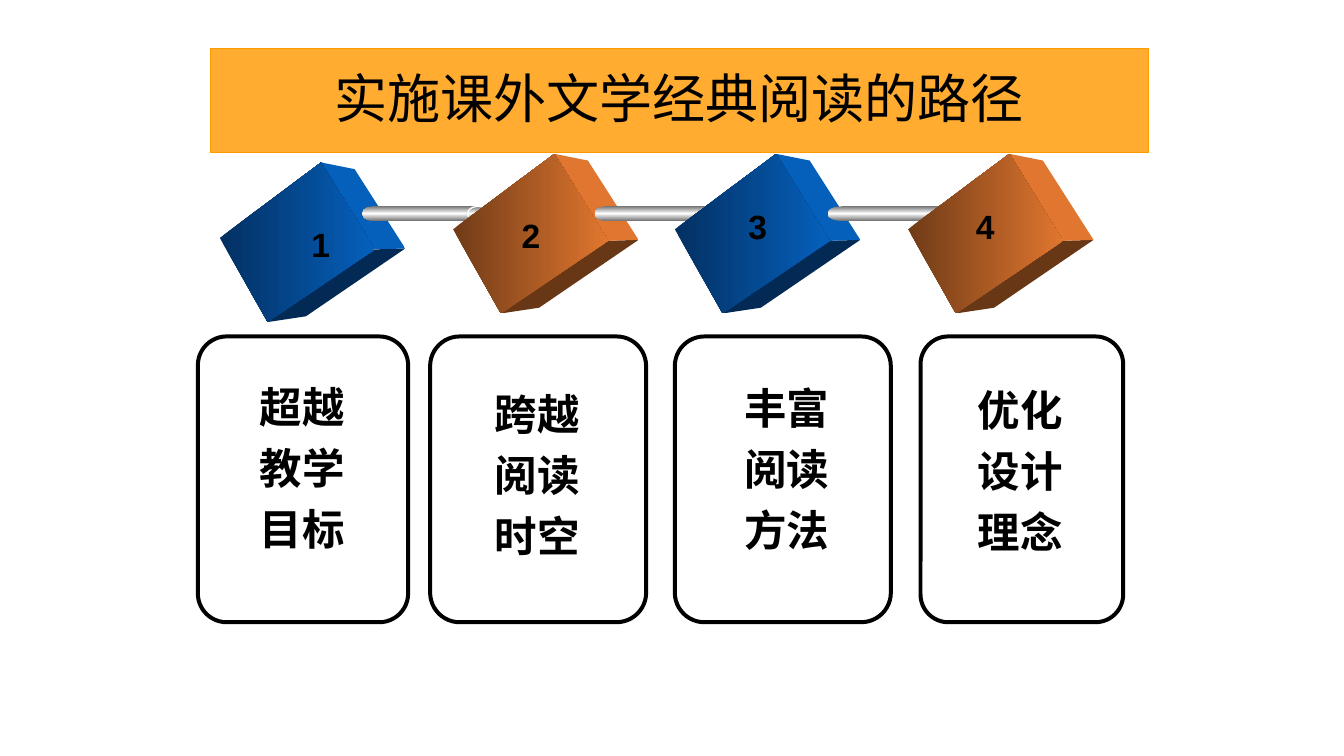
from lxml import etree
from pptx import Presentation
from pptx.dml.color import RGBColor
from pptx.enum.shapes import MSO_SHAPE
from pptx.enum.text import MSO_ANCHOR, PP_ALIGN
from pptx.oxml.ns import qn
from pptx.util import Inches, Pt

BLACK = RGBColor(0x00, 0x00, 0x00)
WHITE = RGBColor(0xFF, 0xFF, 0xFF)
ORANGE = RGBColor(0xFF, 0x99, 0x00)
STEEL = RGBColor(0x76, 0x76, 0x76)
BLUE_FACES = (RGBColor(0x03, 0x30, 0x62), RGBColor(0x05, 0x60, 0xBC), RGBColor(0x02, 0x2A, 0x55))
COPPER_FACES = (RGBColor(0x70, 0x3B, 0x17), RGBColor(0xE0, 0x76, 0x2F), RGBColor(0x68, 0x37, 0x16))

CUBE_LEFT, CUBE_TOP, CUBE_RIGHT, CUBE_BOTTOM = (0, 0.79), (1.06, 0), (1.62, 0.91), (0.5, 1.67)
BACK_TOP, BACK_RIGHT, BACK_BOTTOM = (1.41, 0.07), (1.94, 0.9), (0.9, 1.61)
FRONT_FACE = (CUBE_LEFT, CUBE_TOP, CUBE_RIGHT, CUBE_BOTTOM)
SIDE_FACE = (CUBE_TOP, BACK_TOP, BACK_RIGHT, CUBE_RIGHT)
LOWER_FACE = (CUBE_BOTTOM, CUBE_RIGHT, BACK_RIGHT, BACK_BOTTOM)

ROD_TOP, ROD_HEIGHT = 2.16, 0.15
RODS = [(3.79, 0.22, 1.32), (6.22, 0.22, 1.32), (8.66, 0.29, 1.72)]
CUBES = [
    (2.3, 1.7, BLUE_FACES, (3.16, 2.29)),
    (4.74, 1.61, COPPER_FACES, (5.36, 2.2)),
    (7.06, 1.61, BLUE_FACES, (7.73, 2.11)),
    (9.5, 1.61, COPPER_FACES, (10.11, 2.11)),
]
CARD_TOP, CARD_HEIGHT = 3.52, 2.99
CARDS = [
    (2.07, 2.2, (2.62, 3.94), ("超越", "教学", "目标")),
    (4.5, 2.26, (5.08, 4.01), ("跨越", "阅读", "时空")),
    (7.06, 2.26, (7.69, 3.95), ("丰富", "阅读", "方法")),
    (9.63, 2.12, (10.13, 3.97), ("优化", "设计", "理念")),
]


def add_span(para, text, size, font, bold=False):
    span = para.add_run()
    span.text = text
    span.font.size = Pt(size)
    span.font.name = font
    span.font.bold = bold
    span.font.color.rgb = BLACK


def fill_gradient(shape, colors, angle):
    shape.fill.gradient()
    shape.fill.gradient_angle = angle
    stops = shape.element.spPr.find(qn("a:gradFill")).find(qn("a:gsLst"))
    for stop in list(stops):
        stops.remove(stop)
    for index, color in enumerate(colors):
        position = round(100000 * index / (len(colors) - 1))
        stop = etree.SubElement(stops, qn("a:gs"), pos=str(position))
        etree.SubElement(stop, qn("a:srgbClr"), val=str(color))


def add_title(slide, left, top, width, height):
    title = slide.shapes.title
    title.left, title.top = Inches(left), Inches(top)
    title.width, title.height = Inches(width), Inches(height)
    title.fill.solid()
    title.fill.fore_color.rgb = ORANGE
    color = title.element.spPr.find(qn("a:solidFill"))[0]
    etree.SubElement(color, qn("a:alpha"), val="81000")
    title.line.color.rgb = ORANGE
    title.line.width = Pt(0.75)
    title.text_frame.vertical_anchor = MSO_ANCHOR.MIDDLE
    para = title.text_frame.paragraphs[0]
    para.alignment = PP_ALIGN.CENTER
    para.line_spacing = 0.9
    add_span(para, "实施课外文学经典阅读的路径", 40, "Calibri")


def add_rod(slide, left, top, cap_width, length):
    half = cap_width / 2
    pieces = [
        (MSO_SHAPE.OVAL, left, cap_width),
        (MSO_SHAPE.RECTANGLE, left + half, length - cap_width),
        (MSO_SHAPE.OVAL, left + length - cap_width, cap_width),
    ]
    for kind, piece_left, width in pieces:
        piece = slide.shapes.add_shape(
            kind, Inches(piece_left), Inches(top), Inches(width), Inches(ROD_HEIGHT))
        piece.shadow.inherit = False
        fill_gradient(piece, (STEEL, WHITE, STEEL), 270)
        piece.line.fill.background()
    piece.line.color.rgb = WHITE
    piece.line.width = Pt(1)


def add_cube(slide, left, top, colors):
    dark, bright, lower = colors
    faces = [
        (LOWER_FACE, (lower, lower)),
        (SIDE_FACE, (bright, bright)),
        (FRONT_FACE, (dark, bright)),
    ]
    for corners, shades in faces:
        points = [(Inches(left + x), Inches(top + y)) for x, y in corners]
        builder = slide.shapes.build_freeform(*points[0])
        builder.add_line_segments(points[1:], close=True)
        face = builder.convert_to_shape()
        face.shadow.inherit = False
        fill_gradient(face, shades, 0)
        face.line.fill.background()


def add_number(slide, left, top, number):
    box = slide.shapes.add_textbox(Inches(left), Inches(top), Inches(0.4), Inches(0.53))
    box.text_frame.word_wrap = False
    add_span(box.text_frame.paragraphs[0], str(number), 25.3, "Arial", bold=True)


def add_card(slide, left, top, width, height):
    card = slide.shapes.add_shape(
        MSO_SHAPE.ROUNDED_RECTANGLE, Inches(left), Inches(top), Inches(width), Inches(height))
    card.adjustments[0] = 0.137
    card.shadow.inherit = False
    card.fill.background()
    card.line.color.rgb = BLACK
    card.line.width = Pt(3)


def add_card_text(slide, left, top, lines):
    box = slide.shapes.add_textbox(Inches(left), Inches(top), Inches(2.64), Inches(1.93))
    frame = box.text_frame
    frame.word_wrap = True
    for index, line in enumerate(lines):
        para = frame.add_paragraph() if index else frame.paragraphs[0]
        para.space_before = Pt(7.4)
        add_span(para, line, 32, "Arial", bold=True)


def main():
    deck = Presentation()
    deck.slide_width, deck.slide_height = Inches(14.06), Inches(7.91)
    slide = deck.slides.add_slide(deck.slide_layouts[5])
    add_title(slide, 2.2, 0.51, 9.81, 1.09)
    for left, width, _, _ in CARDS:
        add_card(slide, left, CARD_TOP, width, CARD_HEIGHT)
    for index, (left, top, colors, _) in enumerate(CUBES):
        add_cube(slide, left, top, colors)
        if index < len(RODS):
            rod_left, cap_width, length = RODS[index]
            add_rod(slide, rod_left, ROD_TOP, cap_width, length)
    for _, _, (left, top), lines in CARDS:
        add_card_text(slide, left, top, lines)
    for number, (_, _, _, (left, top)) in enumerate(CUBES, start=1):
        add_number(slide, left, top, number)
    deck.save("out.pptx")


if __name__ == "__main__":
    main()
